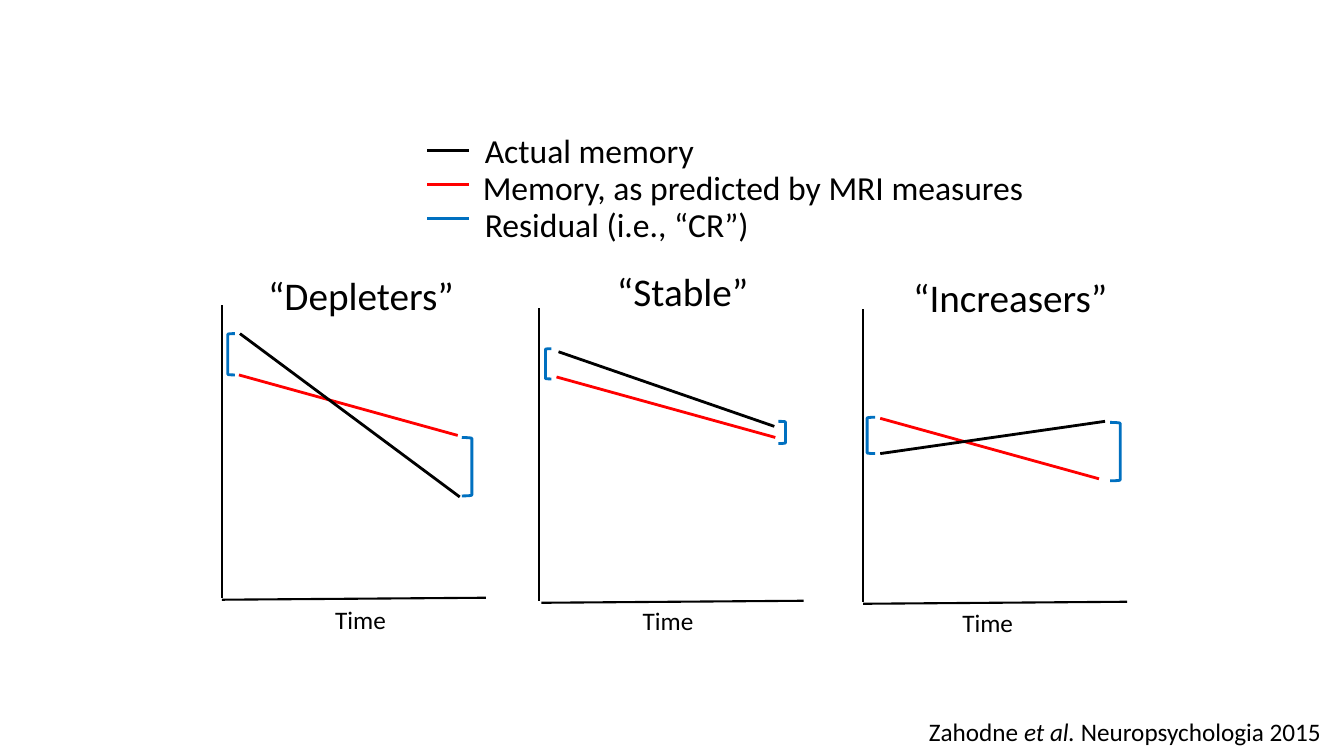
from lxml.etree import SubElement
from pptx import Presentation
from pptx.dml.color import RGBColor
from pptx.enum.shapes import MSO_CONNECTOR, MSO_SHAPE
from pptx.enum.text import MSO_AUTO_SIZE, PP_ALIGN
from pptx.oxml.ns import qn
from pptx.util import Inches, Pt

COLORS = {"actual": "000000", "predicted": "FF0000", "residual": "0070C0",
          "axis": "000000", "text": "000000"}
FONT = "Calibri"

# Every position inside a panel is an offset from the top of its vertical axis.
PANELS = [
    {"title": "“Depleters”", "origin": (2.2, 3.03), "title_box": (0, -0.39, 2.76),
     "actual": (0.18, 0.28, 2.36, 1.9), "predicted_top": 0.69,
     "first_gap": (0.06, 0.28, 0.07, 0.41), "last_gap": (2.38, 1.31, 0.1, 0.58),
     "axis_start": 0, "time": (0.13, 2.92)},
    {"title": "“Stable”", "origin": (5.35, 3.06), "title_box": (-0.03, -0.46, 2.9),
     "actual": (0.19, 0.43, 2.33, 1.17), "predicted_top": 0.68,
     "first_gap": (0.06, 0.4, 0.06, 0.3), "last_gap": (2.37, 1.12, 0.07, 0.22),
     "axis_start": 0.02, "time": (0.03, 2.9)},
    {"title": "“Increasers”", "origin": (8.56, 3.07), "title_box": (-0.01, -0.41, 2.94),
     "actual": (0.17, 1.43, 2.4, 1.11), "predicted_top": 1.08,
     "first_gap": (0.04, 1.07, 0.08, 0.36), "last_gap": (2.45, 1.12, 0.1, 0.58),
     "axis_start": 0, "time": (-0.01, 2.91)},
]

LEGEND = [
    ("actual", "Actual memory", 0.47),
    ("predicted", "Memory, as predicted by MRI measures", 0.45),
    ("residual", "Residual (i.e., “CR”)", 0.47),
]


def add_text(slide, text, left, top, width, height, size=18, align=PP_ALIGN.LEFT):
    """Write one line; text is a string or a list of (string, italic) pairs."""
    box = slide.shapes.add_textbox(Inches(left), Inches(top), Inches(width), Inches(height))
    frame = box.text_frame
    frame.word_wrap = True
    frame.auto_size = MSO_AUTO_SIZE.SHAPE_TO_FIT_TEXT
    line = frame.paragraphs[0]
    line.alignment = align
    for words, italic in [(text, False)] if isinstance(text, str) else text:
        run = line.add_run()
        run.text = words
        run.font.name = FONT
        run.font.size = Pt(size)
        run.font.italic = italic
        run.font.color.rgb = RGBColor.from_string(COLORS["text"])


def add_line(slide, x1, y1, x2, y2, color, weight=2):
    line = slide.shapes.add_connector(
        MSO_CONNECTOR.STRAIGHT, Inches(x1), Inches(y1), Inches(x2), Inches(y2))
    line.line.color.rgb = RGBColor.from_string(COLORS[color])
    line.line.width = Pt(weight)
    SubElement(line._element.spPr, qn("a:effectLst"))


def add_gap_bracket(slide, left, top, width, height, rotation=0):
    bracket = slide.shapes.add_shape(
        MSO_SHAPE.LEFT_BRACKET, Inches(left), Inches(top), Inches(width), Inches(height))
    bracket.rotation = rotation
    bracket.shadow.inherit = False
    bracket.fill.background()
    bracket.line.color.rgb = RGBColor.from_string(COLORS["residual"])
    bracket.line.width = Pt(2)


def add_legend(slide, left, top):
    for row, (color, label, label_offset) in enumerate(LEGEND):
        key_y = top + 0.25 + 0.34 * row
        add_line(slide, left, key_y, left + 0.41, key_y, color)
        add_text(slide, label, left + label_offset, top + 0.365 * row, 6.3, 0.5, size=24)


def add_panel(slide, panel):
    x, y = panel["origin"]

    # Axes
    add_line(slide, x, y, x, y + 2.9, "axis", weight=1.5)
    add_line(slide, x + panel["axis_start"], y + 2.92, x + 2.62, y + 2.9, "axis", weight=1.5)

    # Memory lines
    predicted_y = y + panel["predicted_top"]
    add_line(slide, x + 0.17, predicted_y, x + 2.34, predicted_y + 0.6, "predicted")
    x1, y1, x2, y2 = panel["actual"]
    add_line(slide, x + x1, y + y1, x + x2, y + y2, "actual")

    # Residual brackets at first and last visit
    for gap, rotation in (("first_gap", 0), ("last_gap", 180)):
        dx, dy, width, height = panel[gap]
        add_gap_bracket(slide, x + dx, y + dy, width, height, rotation)

    # Title and time label
    dx, dy, width = panel["title_box"]
    add_text(slide, panel["title"], x + dx, y + dy, width, 0.57, size=28, align=PP_ALIGN.CENTER)
    dx, dy = panel["time"]
    add_text(slide, "Time", x + dx, y + dy, 2.49, 0.4, align=PP_ALIGN.CENTER)


def add_citation(slide, left, top, width):
    citation = [("Zahodne ", False), ("et al. ", True), ("Neuropsychologia 2015", False)]
    add_text(slide, citation, left, top, width, 0.4, align=PP_ALIGN.RIGHT)


def main():
    deck = Presentation()
    deck.slide_width, deck.slide_height = Inches(13.33), Inches(7.5)
    slide = deck.slides.add_slide(deck.slide_layouts[6])
    add_legend(slide, 4.24, 1.24)
    for panel in PANELS:
        add_panel(slide, panel)
    add_citation(slide, 8.25, 7.06, 4.95)
    deck.save("out.pptx")


if __name__ == "__main__":
    main()
